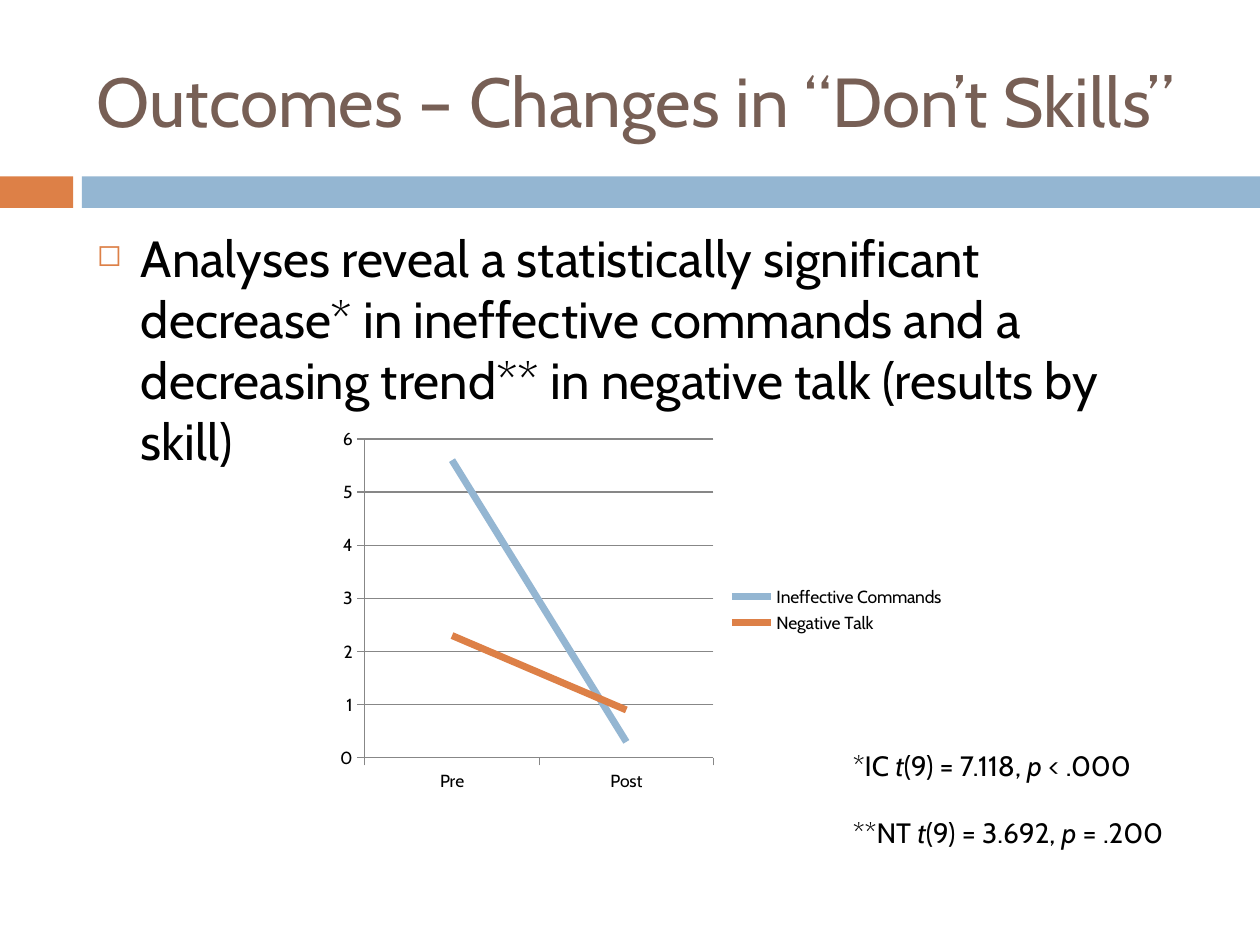
from dataclasses import dataclass

from lxml.etree import SubElement
from pptx import Presentation
from pptx.chart.data import CategoryChartData
from pptx.dml.color import RGBColor
from pptx.enum.chart import XL_CHART_TYPE, XL_LEGEND_POSITION, XL_MARKER_STYLE, XL_TICK_MARK
from pptx.enum.shapes import MSO_SHAPE
from pptx.enum.text import MSO_ANCHOR
from pptx.oxml.ns import qn
from pptx.util import Inches, Pt

FONT = "Cabin"
BLUE, ORANGE, BROWN, BLACK, GRAY = "94B6D2", "DD8047", "775F55", "000000", "878787"


@dataclass(frozen=True)
class Box:
    """A rectangle in shares of the slide's width and height."""
    left: float
    top: float
    width: float
    height: float

    def place(self, presentation) -> tuple:
        across, down = presentation.slide_width, presentation.slide_height
        return (int(self.left * across), int(self.top * down),
                int(self.width * across), int(self.height * down))


@dataclass(frozen=True)
class Band:
    box: Box
    color: str


@dataclass(frozen=True)
class Series:
    name: str
    values: tuple
    color: str


@dataclass(frozen=True)
class Statistic:
    label: str
    test: str
    result: str


LEFT, TEXT_WIDTH = 0.067, 0.892
BAND_TOP, BAND_HEIGHT = 1.4 / 7.5, 0.25 / 7.5
BANDS = (
    Band(Box(0, BAND_TOP, 0.058, BAND_HEIGHT), ORANGE),
    Band(Box(0.065, BAND_TOP, 0.935, BAND_HEIGHT), BLUE),
)
TITLE_BOX = Box(LEFT, 0.25 / 7.5, TEXT_WIDTH, 1.08 / 7.5)
BODY_BOX = Box(LEFT, 1.75 / 7.5, TEXT_WIDTH, 4.92 / 7.5)
CHART_BOX = Box(0.26, 3.34 / 7.5, 0.5, 0.4)
NOTE_BOX = Box(0.667, 5.89 / 7.5, 0.278, 0.91 / 7.5)

SERIES = (
    Series("Ineffective Commands", (5.6, 0.3), BLUE),
    Series("Negative Talk", (2.3, 0.9), ORANGE),
)
STATISTICS = (
    Statistic("*IC ", "(9) = 7.118, ", " < .000"),
    Statistic("**NT ", "(9) = 3.692, ", " = .200"),
)


def rgb(color: str) -> RGBColor:
    return RGBColor.from_string(color)


def style_font(font, size: float, color: str = BLACK) -> None:
    font.name = FONT
    font.size = Pt(size)
    font.color.rgb = rgb(color)


def style_line(line, color: str, width: float) -> None:
    line.color.rgb = rgb(color)
    line.width = Pt(width)


def add_band(presentation, slide, band: Band) -> None:
    shape = slide.shapes.add_shape(MSO_SHAPE.RECTANGLE, *band.box.place(presentation))
    shape.shadow.inherit = False
    shape.fill.solid()
    shape.fill.fore_color.rgb = rgb(band.color)
    shape.line.fill.background()


def add_text(presentation, slide, box: Box, text: str = ""):
    text_frame = slide.shapes.add_textbox(*box.place(presentation)).text_frame
    text_frame.word_wrap = True
    text_frame.text = text
    return text_frame


def add_bullet(paragraph, indent: float) -> None:
    properties = paragraph._p.get_or_add_pPr()
    properties.set("marL", str(Inches(indent)))
    properties.set("indent", str(-Inches(indent)))
    bullet_color = SubElement(properties, qn("a:buClr"))
    SubElement(bullet_color, qn("a:srgbClr"), val=ORANGE)
    SubElement(properties, qn("a:buSzPct"), val="60000")
    SubElement(properties, qn("a:buChar"), char="◻")


def add_line_chart(presentation, slide, box: Box) -> None:
    data = CategoryChartData()
    data.categories = ("Pre", "Post")
    for series in SERIES:
        data.add_series(series.name, series.values)
    chart = slide.shapes.add_chart(
        XL_CHART_TYPE.LINE, *box.place(presentation), data).chart
    style_font(chart.font, 10)
    chart.has_title = False
    chart.has_legend = True
    chart.legend.position = XL_LEGEND_POSITION.RIGHT
    chart.legend.include_in_layout = False

    for axis in (chart.category_axis, chart.value_axis):
        axis.major_tick_mark = XL_TICK_MARK.OUTSIDE
        axis.minor_tick_mark = XL_TICK_MARK.NONE
        style_line(axis.format.line, GRAY, 0.75)
    chart.value_axis.minimum_scale = 0
    chart.value_axis.maximum_scale = 6
    chart.value_axis.major_unit = 1
    chart.value_axis.has_major_gridlines = True
    style_line(chart.value_axis.major_gridlines.format.line, GRAY, 0.75)

    for plotted, series in zip(chart.plots[0].series, SERIES):
        plotted.smooth = False
        plotted.marker.style = XL_MARKER_STYLE.NONE
        style_line(plotted.format.line, series.color, 4)


def write_statistic(paragraph, statistic: Statistic) -> None:
    parts = (statistic.label, "t", statistic.test, "p", statistic.result)
    for position, part in enumerate(parts):
        run = paragraph.add_run()
        run.text = part
        style_font(run.font, 16)
        run.font.italic = position % 2 == 1


def main() -> None:
    presentation = Presentation()
    presentation.slide_width, presentation.slide_height = Inches(10), Inches(7.5)
    slide = presentation.slides.add_slide(presentation.slide_layouts[6])

    # Divider under the title
    for band in BANDS:
        add_band(presentation, slide, band)

    # Title
    title = add_text(presentation, slide, TITLE_BOX,
                     "Outcomes – Changes in “Don’t Skills”")
    title.vertical_anchor = MSO_ANCHOR.MIDDLE
    style_font(title.paragraphs[0].runs[0].font, 39.6, BROWN)

    # Bulleted finding
    body = add_text(presentation, slide, BODY_BOX,
                    "Analyses reveal a statistically significant decrease* in ineffective "
                    "commands and a decreasing trend** in negative talk (results by skill)")
    finding = body.paragraphs[0]
    finding.space_before = Pt(7)
    add_bullet(finding, 0.35)
    style_font(finding.runs[0].font, 29)

    # Scores before and after
    add_line_chart(presentation, slide, CHART_BOX)

    # Test statistics, one line apart
    notes = add_text(presentation, slide, NOTE_BOX)
    write_statistic(notes.paragraphs[0], STATISTICS[0])
    for statistic in STATISTICS[1:]:
        paragraph = notes.add_paragraph()
        paragraph.space_before = Pt(19)
        write_statistic(paragraph, statistic)

    presentation.save("out.pptx")


if __name__ == "__main__":
    main()
